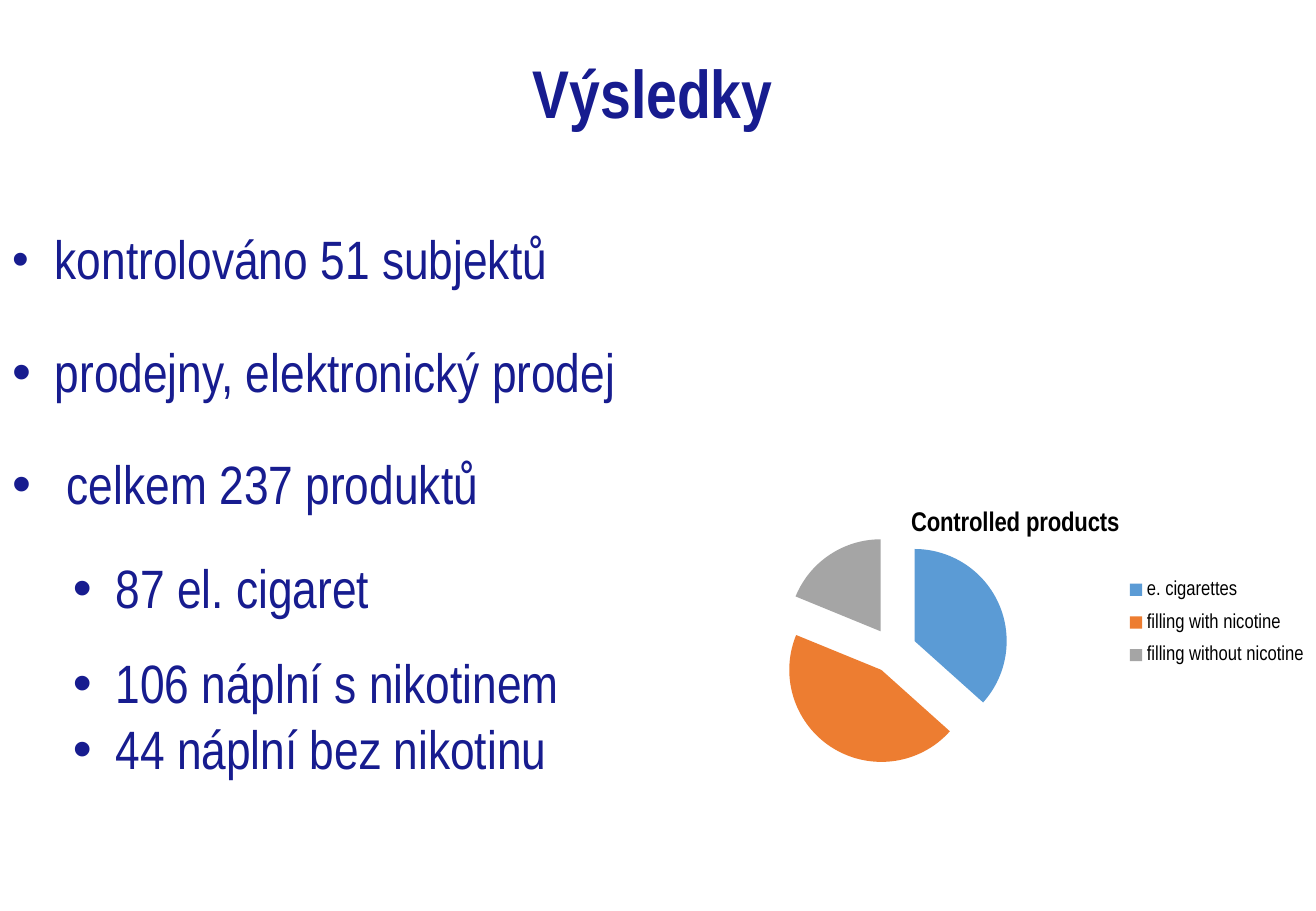
from dataclasses import dataclass

from lxml.etree import SubElement
from pptx import Presentation
from pptx.chart.chart import Chart
from pptx.chart.data import CategoryChartData
from pptx.dml.color import RGBColor
from pptx.enum.chart import XL_CHART_TYPE as ChartType, XL_LEGEND_POSITION as LegendPosition
from pptx.enum.text import MSO_ANCHOR as Anchor, MSO_AUTO_SIZE as AutoSize, PP_ALIGN as Align
from pptx.oxml import parse_xml
from pptx.oxml.ns import nsdecls, qn
from pptx.oxml.xmlchemy import BaseOxmlElement as Element
from pptx.shapes.placeholder import SlidePlaceholder
from pptx.slide import Slide
from pptx.text.text import Font
from pptx.util import Inches, Pt

COLORS = {"navy": "171C8F", "black": "000000", "white": "FFFFFF",
          "blue": "5B9BD5", "orange": "ED7D31", "gray": "A5A5A5"}
NARROW = "Arial Narrow"


@dataclass(frozen=True)
class Finding:
    text: str
    space_before: float = 0
    level: int = 0
    hanging: float = 0.35
    bullet_percent: int = 100


@dataclass(frozen=True)
class Product:
    name: str
    share: int
    color: str


FINDINGS = [
    Finding("kontrolováno 51 subjektů", bullet_percent=88),
    Finding("prodejny, elektronický prodej", 32),
    Finding("celkem 237 produktů", 32, hanging=0.45),
    Finding("87 el. cigaret", 27, level=1),
    Finding("106 náplní s nikotinem", 21.5, level=1),
    Finding("44 náplní bez nikotinu", 5, level=1),
]
PRODUCTS = [
    Product("e. cigarettes", 37, "blue"),
    Product("filling with nicotine", 45, "orange"),
    Product("filling without nicotine", 19, "gray"),
]


def rgb(name: str) -> RGBColor:
    return RGBColor.from_string(COLORS[name])


def style_font(font: Font, size: float, color: str, bold: bool = False,
               face: str = NARROW) -> None:
    font.name, font.size, font.bold = face, Pt(size), bold
    font.color.rgb = rgb(color)


def place(holder: SlidePlaceholder, left: float, top: float, width: float,
          height: float, anchor: Anchor) -> None:
    holder.left, holder.top = Inches(left), Inches(top)
    holder.width, holder.height = Inches(width), Inches(height)
    frame = holder.text_frame
    frame.auto_size, frame.word_wrap = AutoSize.NONE, True
    frame.vertical_anchor = anchor


def add_title(slide: Slide) -> None:
    title = slide.shapes.title
    place(title, 2.62, 0.07, 5.5, 1.45, Anchor.MIDDLE)
    title.text_frame.text = "Výsledky"
    heading = title.text_frame.paragraphs[0]
    heading.alignment, heading.line_spacing = Align.CENTER, 0.9
    style_font(heading.font, 40, "navy", bold=True)


def add_findings(slide: Slide) -> None:
    body = slide.placeholders[1]
    place(body, 0, 1.87, 10.61, 4.86, Anchor.TOP)
    frame = body.text_frame
    for number, finding in enumerate(FINDINGS):
        paragraph = frame.add_paragraph() if number else frame.paragraphs[0]
        paragraph.text, paragraph.level = finding.text, finding.level
        properties = paragraph._p.get_or_add_pPr()
        properties.set("marL", str(Inches(0.5 * finding.level + finding.hanging)))
        properties.set("indent", str(-Inches(finding.hanging)))
        SubElement(properties, qn("a:buSzPct"), val=str(finding.bullet_percent * 1000))
        SubElement(properties, qn("a:buFont"), typeface="Arial")
        SubElement(properties, qn("a:buChar"), char="•")
        paragraph.alignment, paragraph.line_spacing = Align.LEFT, 0.9
        paragraph.space_before = Pt(finding.space_before)
        style_font(paragraph.font, 32, "navy")


def set_layout(part: Element, position: int, left: float, top: float,
               width: float, height: float, target: str = "") -> None:
    """Fix a chart part's box, in fractions of the chart's size."""
    values = {"x": left, "y": top, "w": width, "h": height}
    modes = "".join(f'<c:{axis}Mode val="edge"/>' for axis in "xy")
    sizes = "".join(f'<c:{key} val="{value}"/>' for key, value in values.items())
    layout = parse_xml(f'<c:layout {nsdecls("c")}><c:manualLayout>{target}{modes}{sizes}'
                       '</c:manualLayout></c:layout>')
    for automatic in part.findall(qn("c:layout")):
        part.remove(automatic)
    part.insert(position, layout)


def add_legend(chart: Chart) -> None:
    chart.has_legend = True
    legend = chart.legend
    legend.position = LegendPosition.RIGHT
    legend.include_in_layout = False
    style_font(legend.font, 12, "black")
    set_layout(legend._element, 1, 0.66, 0.24, 0.31, 0.36)


def add_products_chart(slide: Slide) -> None:
    data = CategoryChartData()
    data.categories = [product.name for product in PRODUCTS]
    data.add_series("Series 1", [product.share for product in PRODUCTS])
    chart = slide.shapes.add_chart(ChartType.PIE, Inches(5.72), Inches(4.05),
                                   Inches(5.27), Inches(2.56), data).chart
    style_font(chart.font, 10, "black", face="Calibri")

    chart.has_title = True
    chart.chart_title.include_in_layout = False
    heading = chart.chart_title.text_frame
    heading.text = "Controlled products"
    style_font(heading.paragraphs[0].font, 16, "black", bold=True)
    add_legend(chart)

    plot = chart.plots[0]
    plot.vary_by_categories = True
    series = plot.series[0]
    for number, product in enumerate(PRODUCTS):
        fill = series.points[number].format.fill
        fill.solid()
        fill.fore_color.rgb = rgb(product.color)
    explosion = parse_xml(f'<c:explosion {nsdecls("c")} val="25"/>')
    series._element.find(qn("c:dPt")).addprevious(explosion)
    set_layout(chart._chartSpace.chart.plotArea, 0, 0.02, 0.14, 0.58, 0.74,
               '<c:layoutTarget val="inner"/>')


def main() -> None:
    deck = Presentation()
    deck.slide_width, deck.slide_height = Inches(10.83), Inches(7.5)
    slide = deck.slides.add_slide(deck.slide_layouts[1])
    slide.background.fill.solid()
    slide.background.fill.fore_color.rgb = rgb("white")
    add_title(slide)
    add_findings(slide)
    add_products_chart(slide)
    deck.save("out.pptx")


if __name__ == "__main__":
    main()
